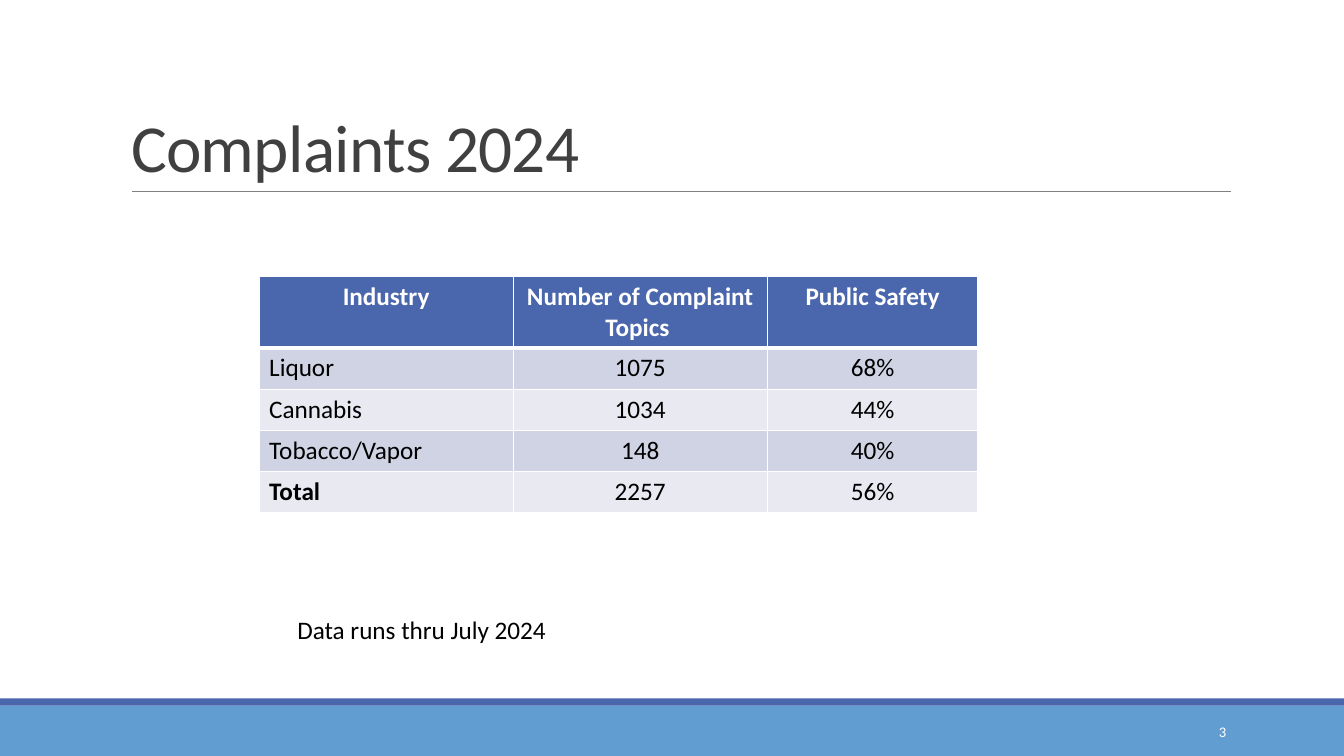
from lxml.etree import SubElement
from pptx import Presentation
from pptx.dml.color import RGBColor
from pptx.enum.shapes import MSO_CONNECTOR, MSO_SHAPE
from pptx.enum.text import MSO_ANCHOR, MSO_AUTO_SIZE, PP_ALIGN
from pptx.oxml import parse_xml
from pptx.oxml.ns import nsdecls, qn
from pptx.util import Inches, Pt

WHITE = RGBColor(0xFF, 0xFF, 0xFF)
BLACK = RGBColor(0, 0, 0)
DARK = RGBColor(0x40, 0x40, 0x40)
GRAY = RGBColor(0x80, 0x80, 0x80)
NAVY = RGBColor(0x4A, 0x66, 0xAC)
BLUE = RGBColor(0x62, 0x9D, 0xD1)
BANDS = RGBColor(0xD0, 0xD3, 0xE3), RGBColor(0xE9, 0xEA, 0xF1)

WIDTHS = 2.52, 2.52, 2.09
HEIGHTS = 0.7, 0.41, 0.41, 0.41, 0.41
ROWS = [
    ("Industry", "Number of Complaint Topics ", "Public Safety"),
    ("Liquor", "1075", "68%"),
    ("Cannabis", "1034", "44%"),
    ("Tobacco/Vapor", "148", "40%"),
    ("Total", "2257", "56%"),
]


class Deck:
    """Hold the style and the current slide, and draw each kind of element."""

    def __init__(self, font):
        self.font = font
        self.file = Presentation()
        self.file.slide_width = Inches(13.33)
        self.file.slide_height = Inches(7.5)
        self.slide = self.file.slides.add_slide(self.file.slide_layouts[5])
        self.shapes = self.slide.shapes

    def add_run(self, frame, text, size, color, bold=False, align=PP_ALIGN.LEFT):
        para = frame.paragraphs[0]
        para.alignment = align
        run = para.add_run()
        run.text = text
        run.font.name = self.font
        run.font.size = Pt(size)
        run.font.bold = bold
        run.font.color.rgb = color
        return run

    def title(self, box, text):
        shape = self.shapes.title
        shape.left, shape.top, shape.width, shape.height = map(Inches, box)
        frame = shape.text_frame
        frame.auto_size = MSO_AUTO_SIZE.NONE
        frame.vertical_anchor = MSO_ANCHOR.BOTTOM
        run = self.add_run(frame, text, 48, DARK)
        run._r.get_or_add_rPr().set("spc", "-50")
        frame.paragraphs[0].line_spacing = 0.85

    def band(self, box, color):
        shape = self.shapes.add_shape(MSO_SHAPE.RECTANGLE, *map(Inches, box))
        shape.shadow.inherit = False
        shape.fill.solid()
        shape.fill.fore_color.rgb = color
        shape.line.fill.background()

    def rule(self, ends, color, width):
        line = self.shapes.add_connector(MSO_CONNECTOR.STRAIGHT, *map(Inches, ends))
        line.line.color.rgb = color
        line.line.width = Pt(width)
        SubElement(line._element.spPr, qn("a:effectLst"))

    def text(self, box, text, size, color, align=PP_ALIGN.LEFT,
             anchor=MSO_ANCHOR.TOP, wrap=True):
        frame = self.shapes.add_textbox(*map(Inches, box)).text_frame
        frame.word_wrap = wrap
        frame.vertical_anchor = anchor
        self.add_run(frame, text, size, color, align=align)

    def edge(self, cell, row):
        sides = {"L": 1, "R": 1, "T": 3 if row == 1 else 1, "B": 1 if row else 3}
        for spot, (side, width) in enumerate(sides.items()):
            cell._tc.get_or_add_tcPr().insert(spot, parse_xml(
                f'<a:ln{side} {nsdecls("a")} w="{Pt(width)}"><a:solidFill>'
                f'<a:srgbClr val="{WHITE}"/></a:solidFill></a:ln{side}>'))

    def table(self, left, top):
        size = left, top, sum(WIDTHS), sum(HEIGHTS)
        table = self.shapes.add_table(len(ROWS), len(WIDTHS), *map(Inches, size)).table
        for col, width in zip(table.columns, WIDTHS):
            col.width = Inches(width)
        for row, (line, height) in enumerate(zip(ROWS, HEIGHTS)):
            table.rows[row].height = Inches(height)
            for col, text in enumerate(line):
                cell = table.cell(row, col)
                cell.fill.solid()
                cell.fill.fore_color.rgb = BANDS[(row - 1) % 2] if row else NAVY
                self.edge(cell, row)
                self.add_run(cell.text_frame, text, 18, BLACK if row else WHITE,
                             bold=row == 0 or text == "Total",
                             align=PP_ALIGN.LEFT if row and not col else PP_ALIGN.CENTER)


def main():
    deck = Deck("Calibri")
    deck.band((0, 7, 13.33, 0.5), BLUE)
    deck.band((0, 6.93, 13.33, 0.07), NAVY)
    deck.rule((1.31, 1.9, 12.21, 1.9), GRAY, 0.5)
    deck.title((1.2, 0.31, 11, 1.59), "Complaints 2024")
    deck.table(2.57, 2.74)
    deck.text((2.85, 6.05, 2.79, 0.4), "Data runs thru July 2024", 18, BLACK, wrap=False)
    deck.text((10.83, 7.06, 1.43, 0.4), "3", 10.5, WHITE,
              PP_ALIGN.RIGHT, MSO_ANCHOR.MIDDLE)
    deck.file.save("out.pptx")


if __name__ == "__main__":
    main()
